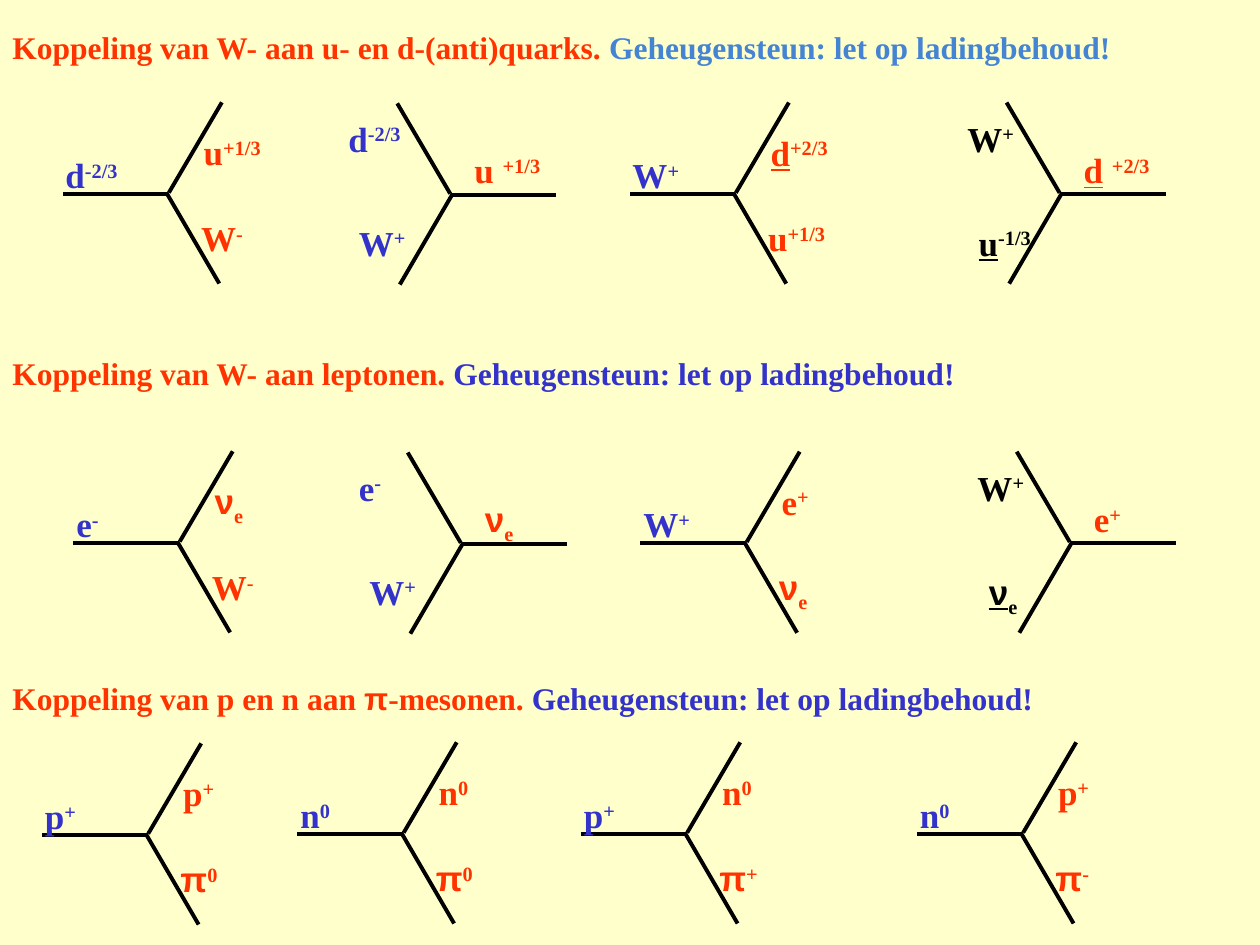
from pptx import Presentation
from pptx.dml.color import RGBColor
from pptx.enum.shapes import MSO_CONNECTOR
from pptx.enum.text import MSO_ANCHOR
from pptx.oxml.ns import qn
from pptx.util import Pt
from lxml import etree

LINE = MSO_CONNECTOR.STRAIGHT
MIDDLE = MSO_ANCHOR.MIDDLE

THEME = {
    "back": "FFFFCC", "red": "FF3300", "blue": "3333CC",
    "sky": "4584D3", "black": "000000",
    "font": "Times New Roman", "greek": "Arial",
    "head": 18, "label": 20, "stroke": 2.25,
}

HINT = "Geheugensteun: let op ladingbehoud!"
# top, height, runs of (text, colour)
HEADS = [
    (0, 54, [("Koppeling van W- aan u- en d-(anti)quarks. ", "red"),
             (HINT, "sky")]),
    (195, 36, [("Koppeling van W- aan leptonen. ", "red"), (HINT, "blue")]),
    (372, 54, [("Koppeling van p en n aan ", "red"), ("π", "red"),
               ("-mesonen. ", "red"), (HINT, "blue")]),
]

# A decay opens to the right (1), a fusion to the left (-1).
# Label slots are (dx, dy, width) from the vertex.
FORMS = {
    "decay": (1, [(-65.5, -26.5, 62), (13.5, -39.5, 51), (12, 9.5, 40)]),
    "wide decay": (1, [(-65.5, -26.5, 62), (13.5, -39.5, 65), (12, 9.5, 54)]),
    "fusion": (-1, [(-66, -48, 62), (6, -30, 60), (-60, 11.5, 46)]),
    "wide fusion": (-1, [(-60.5, -47.5, 80), (6, -29.5, 72), (-54, 12, 58)]),
}
ARMS = [((0.7, -0.7), (31, -52.3)), ((0, 0), (-60, 0)),
        ((-0.7, -0.7), (29.5, 51.2))]

# form, vertex, labels: "~" underlines, "^" raises, "_" lowers
NODES = [
    ("decay", (95.8, 110.8),
     [("d^-2/3", "blue"), ("u^+1/3", "red"), ("W^-", "red")]),
    ("fusion", (258, 111.4),
     [("d^-2/3", "blue"), ("u ^+1/3", "red"), ("W^+", "blue")]),
    ("wide decay", (419.8, 110.9),
     [("W^+", "blue"), ("~d^+2/3", "red"), ("u^+1/3", "red")]),
    ("wide fusion", (606.2, 110.9),
     [("W^+", "black"), ("~d ^+2/3", "red"), ("~u^-1/3", "black")]),
    ("decay", (102, 310.2),
     [("e^-", "blue"), ("ν_e", "red"), ("W^-", "red")]),
    ("fusion", (264, 310.9),
     [("e^-", "blue"), ("ν_e", "red"), ("W^+", "blue")]),
    ("wide decay", (426, 310.4),
     [("W^+", "blue"), ("e^+", "red"), ("ν_e", "red")]),
    ("wide fusion", (612, 310.4),
     [("W^+", "black"), ("e^+", "red"), ("~ν_e", "black")]),
    ("decay", (84, 477.1),
     [("p^+", "blue"), ("p^+", "red"), ("π^0", "red")]),
    ("decay", (230, 476.5),
     [("n^0", "blue"), ("n^0", "red"), ("π^0", "red")]),
    ("decay", (392, 476.5),
     [("p^+", "blue"), ("n^0", "red"), ("π^+", "red")]),
    ("decay", (584, 476.5),
     [("n^0", "blue"), ("p^+", "red"), ("π^-", "red")]),
]


def color(name):
    return RGBColor.from_string(THEME[name])


def add_box(slide, left, top, width, height):
    box = slide.shapes.add_textbox(Pt(left), Pt(top), Pt(width), Pt(height))
    box.text_frame.word_wrap = True
    return box.text_frame


def add_run(para, text, size, tint, shift=0, under=False):
    """Add a bold run; shift is the baseline offset in percent."""
    run = para.add_run()
    run.text = text
    font = run.font
    font.name = THEME["greek" if text in ("ν", "π") else "font"]
    font.size, font.bold = Pt(THEME[size]), True
    font.color.rgb = color(tint)
    if under:
        font.underline = True
    if shift:
        run._r.get_or_add_rPr().set("baseline", str(shift * 1000))


def add_head(slide, top, height, runs):
    frame = add_box(slide, 0, top, 720, height)
    frame.vertical_anchor = MIDDLE
    for text, tint in runs:
        add_run(frame.paragraphs[0], text, "head", tint)


def add_label(slide, left, top, width, mark, tint):
    para = add_box(slide, left, top, width, 31).paragraphs[0]
    sign, shift = ("^", 30) if "^" in mark else ("_", -25)
    base, charge = mark.lstrip("~").split(sign)
    add_run(para, base.strip(), "label", tint, under=mark.startswith("~"))
    if base.endswith(" "):
        add_run(para, " ", "label", tint)
    add_run(para, charge, "label", tint, shift)


def add_arm(slide, x, y, side, start, end):
    ends = [Pt(v) for dx, dy in (start, end) for v in (x + side * dx, y + dy)]
    arm = slide.shapes.add_connector(LINE, *ends)
    arm.line.color.rgb = color("black")
    arm.line.width = Pt(THEME["stroke"])
    etree.SubElement(arm._element.spPr, qn("a:effectLst"))


def add_node(slide, form, spot, labels):
    x, y = spot
    side, slots = FORMS[form]
    for start, end in ARMS:
        add_arm(slide, x, y, side, start, end)
    for (dx, dy, width), (mark, tint) in zip(slots, labels):
        add_label(slide, x + dx, y + dy, width, mark, tint)


def main():
    deck = Presentation()
    deck.slide_width, deck.slide_height = Pt(720), Pt(540)
    slide = deck.slides.add_slide(deck.slide_layouts[6])
    fill = slide.background.fill
    fill.solid()
    fill.fore_color.rgb = color("back")
    for head in HEADS:
        add_head(slide, *head)
    for node in NODES:
        add_node(slide, *node)
    deck.save("out.pptx")


if __name__ == "__main__":
    main()
